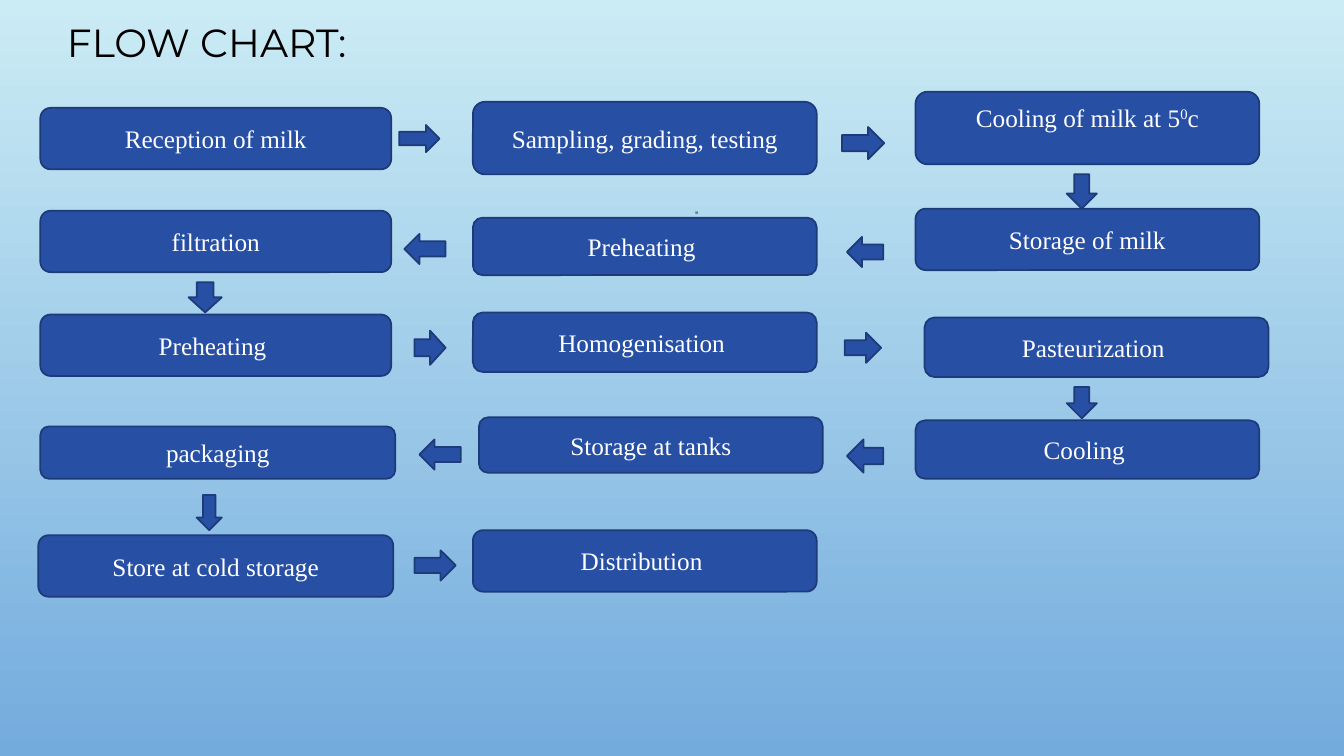
from pptx import Presentation
from pptx import util as u
from pptx.dml import color
from pptx.enum import shapes, text

COLORS = {
    "sky": "CBECF5", "sea": "73ABDD", "box": "274FA4", "edge": "1D3A79",
    "title": "000000", "body": "808080", "label": "FFFFFF",
}
FONTS = {"title": "Montserrat", "body": "Cabin", "label": "Times New Roman"}
SIZES = {"title": 28, "body": 22, "label": 18}
CELL = u.Inches(0.1)
COLUMNS = [(4, 34.8), (46.9, 34.1), (90.8, 34.1)]
FIRST_ROW, ROW_PITCH = 10.7, 10.4

STEPS = [
    ("Reception of milk", 0, 0, 0, 0, 6.1),
    ("Sampling, grading, testing", 1, 0, 0, -0.6, 7.2),
    ("Storage of milk", 2, 1, 0, -0.4, 6.1),
    ("Preheating ", 1, 1, 0, 0.5, 5.7),
    ("filtration", 0, 1, 0, -0.2, 6.1),
    ("Preheating ", 0, 2, 0, -0.3, 6.1),
    ("Homogenisation ", 1, 2, 0, -0.5, 5.9),
    ("Pasteurization ", 2, 2, 0.9, 0, 5.9),
    ("Cooling ", 2, 3, 0, -0.2, 5.8),
    ("Storage at tanks", 1, 3, 0.6, -0.5, 5.5),
    ("packaging", 0, 3, 0, 0.4, 5.2),
    ("Store at cold storage", 0, 4, -0.2, 0.8, 6.1),
    ("Distribution ", 1, 4, 0, 0.3, 6.1),
]
ARROWS = {
    "RIGHT_ARROW": [
        (39.6, 12.4, 4, 2.7), (83.5, 12.6, 4.2, 3.2), (41.1, 32.8, 3.1, 3.4),
        (83.8, 33, 3.6, 3), (41.1, 54.6, 4.1, 3),
    ],
    "LEFT_ARROW": [
        (84, 23.5, 3.6, 3), (40.1, 23.2, 4.1, 3),
        (84, 43.6, 3.6, 3.3), (41.6, 43.6, 4.1, 3),
    ],
    "DOWN_ARROW": [
        (105.8, 17.3, 3, 3.4), (105.8, 38.4, 3, 3.1),
        (18.7, 28, 3.3, 3), (19.5, 49.1, 2.5, 3.5),
    ],
}


def rgb(name):
    return color.RGBColor.from_string(COLORS[name])


def cells(*counts):
    return [round(count * CELL) for count in counts]


class FlowPage:
    def __init__(self, deck):
        self.page = deck.slides.add_slide(deck.slide_layouts[0])

    def background(self):
        fill = self.page.background.fill
        fill.gradient()
        fill.gradient_angle = 270
        for stop, position, name in zip(fill.gradient_stops, (0, 1), ("sky", "sea")):
            stop.position = position
            stop.color.rgb = rgb(name)

    def label(self, box, style, words, anchor):
        frame = box.text_frame
        frame.word_wrap = True
        frame.auto_size = text.MSO_AUTO_SIZE.NONE
        frame.vertical_anchor = anchor
        para = frame.paragraphs[0]
        para.alignment = text.PP_ALIGN.CENTER
        para.space_before = u.Pt(0)
        for part in words:
            span = para.add_run()
            span.text = part
            span.font.name = FONTS[style]
            span.font.size = u.Pt(SIZES[style])
            span.font.color.rgb = rgb(style)
        return para

    def placeholder(self, index, style, words, area, anchor, spacing):
        box = self.page.placeholders[index]
        box.left, box.top, box.width, box.height = cells(*area)
        self.label(box, style, [words], anchor).line_spacing = spacing

    def shape(self, kind, *area):
        item = self.page.shapes.add_shape(kind, *cells(*area))
        item.shadow.inherit = False
        item.fill.solid()
        item.fill.fore_color.rgb = rgb("box")
        item.line.color.rgb = rgb("edge")
        item.line.width = u.Pt(1.25)
        return item

    def step(self, words, column, row, shift, drop, height, anchor=text.MSO_ANCHOR.MIDDLE):
        left, width = COLUMNS[column]
        if column == 0 and row > 2:
            width += 0.4
        top = FIRST_ROW + row * ROW_PITCH + drop
        box = self.shape(shapes.MSO_SHAPE.ROUNDED_RECTANGLE, left + shift, top, width, height)
        self.label(box, "label", words, anchor)
        return box


def main():
    deck = Presentation()
    deck.slide_width, deck.slide_height = u.Inches(13.33), u.Inches(7.5)
    flow = FlowPage(deck)
    flow.background()
    flow.placeholder(0, "title", "FLOW CHART:", (0.7, 0, 39.6, 7), text.MSO_ANCHOR.BOTTOM, 0.9)
    flow.placeholder(1, "body", ".", (21.6, 17, 95, 40.7), text.MSO_ANCHOR.TOP, 1.2)
    for words, *place in STEPS:
        flow.step([words], *place)
    chilled = flow.step(["Cooling of milk at 5", "0", "c"], 2, 0, 0, -1.6, 7.2, text.MSO_ANCHOR.TOP)
    chilled.text_frame.margin_top = u.Inches(0.07)
    degree = chilled.text_frame.paragraphs[0].runs[1]
    degree.font._element.set("baseline", "30000")
    for kind, places in ARROWS.items():
        for place in places:
            flow.shape(shapes.MSO_SHAPE[kind], *place)
    deck.save("out.pptx")


if __name__ == "__main__":
    main()
